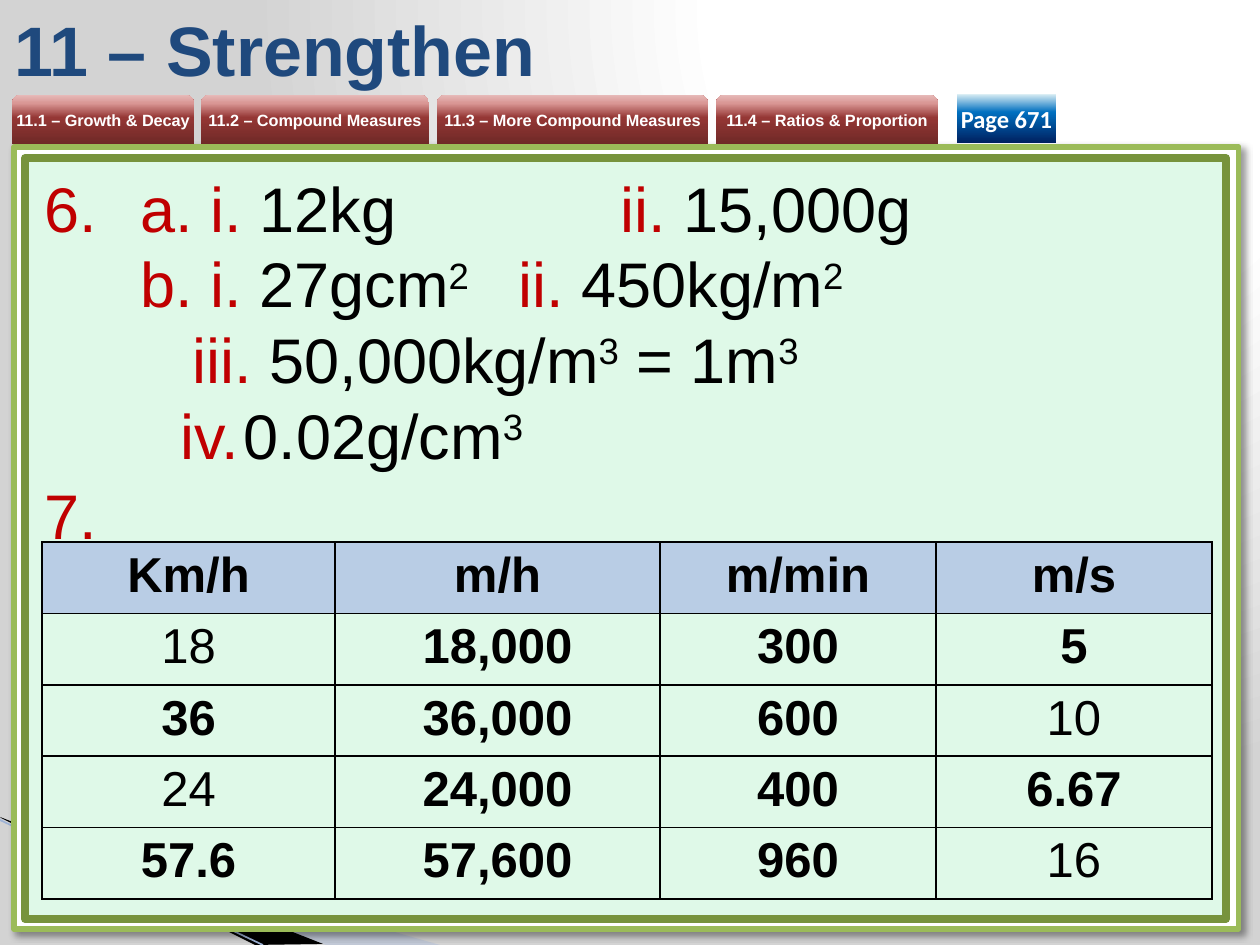
from lxml.etree import SubElement
from pptx import Presentation
from pptx.dml.color import RGBColor
from pptx.enum.shapes import MSO_CONNECTOR, MSO_SHAPE
from pptx.enum.text import MSO_ANCHOR, MSO_AUTO_SIZE, PP_ALIGN
from pptx.oxml.ns import qn
from pptx.util import Emu, Pt

PX = 914400 / 126
C = {
    "white": "FFFFFF", "black": "000000", "title": "1F497D", "label": "C00000",
    "header": "B9CDE5", "panel": "DFF9E8", "panel_line": "77933C",
    "frame_line": "9BBB59", "swoosh": "A7B9DB", "swoosh_line": "9EB3D6",
}
BACKDROP = [(0, "FFFFFF"), (40, "FFFFFF"), (100, "D3D3D3")]
RED_TAB = [(0, "6F2927"), (54, "953735"), (83, "D99694"), (100, "E6B9B8")]
BLUE_TAB = [(0, "002060"), (63, "0070C0"), (100, "DBEEF4")]

TABS = [
    (12, 182, "11.1 – Growth & Decay"),
    (201, 228, "11.2 – Compound Measures"),
    (437, 271, "11.3 – More Compound Measures"),
    (716, 222, "11.4 – Ratios & Proportion"),
]
# Each line: number or None, left margin, tab stop, runs of (style, text)
ANSWERS = [
    (6, 96, 576, [("label", "a. i."), ("text", " 12kg\t"),
                  ("label", "ii."), ("text", " 15,000g")]),
    (None, 96, 576, [("label", "b. i. "), ("text", "27gcm"), ("super", "2"), ("text", "\t"),
                     ("label", "ii."), ("text", " 450kg/m"), ("super", "2")]),
    (None, 148, None, [("label", "iii."), ("text", " 50,000kg/m"), ("super", "3"),
                       ("text", " = 1m"), ("super", "3")]),
    (None, 136, 229, [("label", "iv."), ("text", "\t0.02g/cm"), ("super", "3")]),
    (7, 96, None, [("text", " ")]),
]
SPEEDS = [
    ["Km/h", "m/h", "m/min", "m/s"],
    ["18", "18,000", "300", "5"],
    ["36", "36,000", "600", "10"],
    ["24", "24,000", "400", "6.67"],
    ["57.6", "57,600", "960", "16"],
]
GIVEN = {"18", "10", "24", "16"}


def px(n):
    return Emu(round(n * PX))


def rgb(name):
    return RGBColor.from_string(C[name])


def add(parent, tag, **attrs):
    return SubElement(parent, qn(tag), {k: str(v) for k, v in attrs.items()})


def set_gradient(fill, owner, stops, rect=None):
    """Fill owner bottom to top, or in circles around rect (l, t, r, b in %)."""
    fill.background()
    grad = owner.find(qn("a:noFill"))
    grad.tag = qn("a:gradFill")
    grad.set("rotWithShape", "1")
    gs_list = add(grad, "a:gsLst")
    for pos, color in stops:
        add(add(gs_list, "a:gs", pos=pos * 1000), "a:srgbClr", val=color)
    if rect:
        sides = {k: v * 1000 for k, v in zip("ltrb", rect)}
        add(add(grad, "a:path", path="circle"), "a:fillToRect", **sides)
    else:
        add(grad, "a:lin", ang=16200000, scaled=0)


class Deck:
    font = "Arial"

    def __init__(self):
        self.prs = Presentation()
        self.prs.slide_width, self.prs.slide_height = px(1260), px(945)
        self.s = self.prs.slides.add_slide(self.prs.slide_layouts[1])

    def style(self, r, size, color, bold=False, font=None):
        r.font.name, r.font.size, r.font.bold = font or self.font, Pt(size), bold
        r.font.color.rgb = rgb(color)

    def backdrop(self):
        fill = self.s.background.fill
        fill.background()
        owner = self.s.element.find(".//" + qn("p:bgPr"))
        set_gradient(fill, owner, BACKDROP, (65, 0, 0, 98))

    def swoosh(self, points, color, alpha=None):
        builder = self.s.shapes.build_freeform(*points[0], scale=PX)
        builder.add_line_segments(points[1:])
        sp = builder.convert_to_shape()
        sp.shadow.inherit = False
        sp.fill.solid()
        sp.fill.fore_color.rgb = rgb(color)
        sp.line.fill.background()
        if alpha:
            add(sp.element.spPr.find(".//" + qn("a:srgbClr")), "a:alpha", val=alpha * 1000)

    def line(self, x1, y1, x2, y2, color, width):
        cx = self.s.shapes.add_connector(MSO_CONNECTOR.STRAIGHT, px(x1), px(y1), px(x2), px(y2))
        cx.line.color.rgb = rgb(color)
        cx.line.width = Pt(width)
        add(cx.element.spPr, "a:effectLst")

    def panel(self, x, y, w, h, fill, line, width, shadow=False):
        sp = self.s.shapes.add_shape(MSO_SHAPE.RECTANGLE, px(x), px(y), px(w), px(h))
        sp.shadow.inherit = False
        sp.fill.solid()
        sp.fill.fore_color.rgb = rgb(fill)
        sp.line.color.rgb = rgb(line)
        sp.line.width = Pt(width)
        if shadow:
            effects = sp.element.spPr.find(qn("a:effectLst"))
            outer = add(effects, "a:outerShdw", blurRad=Pt(4), dist=Pt(3), dir=2700000,
                        algn="tl", rotWithShape=0)
            add(add(outer, "a:srgbClr", val=C["black"]), "a:alpha", val=40000)

    def tab(self, x, y, w, text, stops, size, font=None, spacing=None, corner=0.17):
        sp = self.s.shapes.add_shape(MSO_SHAPE.ROUND_2_SAME_RECTANGLE, px(x), px(y), px(w), px(49))
        sp.adjustments[0] = corner
        sp.shadow.inherit = False
        set_gradient(sp.fill, sp.element.spPr, stops)
        sp.line.fill.background()
        tf = sp.text_frame
        tf.margin_left = tf.margin_right = tf.margin_top = tf.margin_bottom = 0
        tf.vertical_anchor = MSO_ANCHOR.MIDDLE
        tf.text = text
        p = tf.paragraphs[0]
        p.alignment = PP_ALIGN.CENTER
        if spacing:
            p.line_spacing = Pt(spacing)
        self.style(p.runs[0], size, "white", True, font)

    def title(self, x, y, w, h, text):
        sp = self.s.shapes.title
        sp.left, sp.top, sp.width, sp.height = map(px, (x, y, w, h))
        tf = sp.text_frame
        tf.text = text
        tf.vertical_anchor = MSO_ANCHOR.MIDDLE
        tf.auto_size = MSO_AUTO_SIZE.NONE
        tf.paragraphs[0].alignment = PP_ALIGN.LEFT
        self.style(tf.paragraphs[0].runs[0], 40, "title", True)

    def answers(self, x, y, w, h, lines):
        sp = self.s.placeholders[1]
        self.s.shapes.element.append(sp.element)  # in front of the panels
        sp.left, sp.top, sp.width, sp.height = map(px, (x, y, w, h))
        tf = sp.text_frame
        tf.auto_size = MSO_AUTO_SIZE.SHAPE_TO_FIT_TEXT
        for i, (number, margin, stop, runs) in enumerate(lines):
            p = tf.add_paragraph() if i else tf.paragraphs[0]
            pPr = p._p.get_or_add_pPr()
            pPr.set("marL", str(px(margin)))
            pPr.set("indent", str(-px(margin) if number else 0))
            if number:
                add(add(pPr, "a:buClr"), "a:srgbClr", val=C["label"])
                add(pPr, "a:buAutoNum", type="arabicPeriod", startAt=number)
            else:
                add(pPr, "a:buNone")
            if stop:
                add(add(pPr, "a:tabLst"), "a:tab", pos=px(stop), algn="l")
            p.space_before = Pt(3 if number and i else 0)
            p.space_after = Pt(0)
            for kind, text in runs:
                r = p.add_run()
                r.text = text
                self.style(r, 36, "label" if kind == "label" else "black")
                if kind == "super":
                    r.font._element.set("baseline", "30000")

    def table(self, x, y, widths, row_height, rows):
        frame = self.s.shapes.add_table(len(rows), len(widths), px(x), px(y),
                                        px(sum(widths)), px(row_height * len(rows)))
        table = frame.table
        table.horz_banding = False
        for col, width in zip(table.columns, widths):
            col.width = px(width)
        for i, row in enumerate(rows):
            for j, text in enumerate(row):
                self.cell(table.cell(i, j), text, text not in GIVEN, i == 0)

    def cell(self, cell, text, bold, header):
        tcPr = cell._tc.get_or_add_tcPr()
        for side in "LRTB":
            ln = add(tcPr, "a:ln" + side, w=Pt(1))
            add(add(ln, "a:solidFill"), "a:srgbClr", val=C["black"])
        if header:
            cell.fill.solid()
            cell.fill.fore_color.rgb = rgb("header")
        else:
            cell.fill.background()
        cell.margin_left = cell.margin_right = cell.margin_top = cell.margin_bottom = px(6)
        cell.text = text
        p = cell.text_frame.paragraphs[0]
        p.alignment = PP_ALIGN.CENTER
        self.style(p.runs[0], 28, "black", bold)


def main():
    d = Deck()
    d.backdrop()
    d.swoosh([(0, 819), (440, 945), (326, 945), (0, 818)], "swoosh", alpha=40)
    d.swoosh([(0, 817), (323, 944), (255, 945), (1, 818)], "black")
    d.line(0, 820, 263, 945, "swoosh_line", 0.95)
    d.panel(14, 147, 1225, 782, "white", "frame_line", 3, shadow=True)
    d.panel(25, 158, 1201, 761, "panel", "panel_line", 4.33)
    for x, w, text in TABS:
        d.tab(x, 95, w, text, RED_TAB, 9.3, spacing=10)
    d.title(2, 4, 1062, 90, "11 – Strengthen")
    d.tab(957, 94, 99, "Page 671", BLUE_TAB, 14, font="Calibri", corner=0)
    d.answers(32, 163, 1180, 374, ANSWERS)
    d.table(42, 542, [293, 325, 276, 276], 71.4, SPEEDS)
    d.prs.save("out.pptx")


if __name__ == "__main__":
    main()
